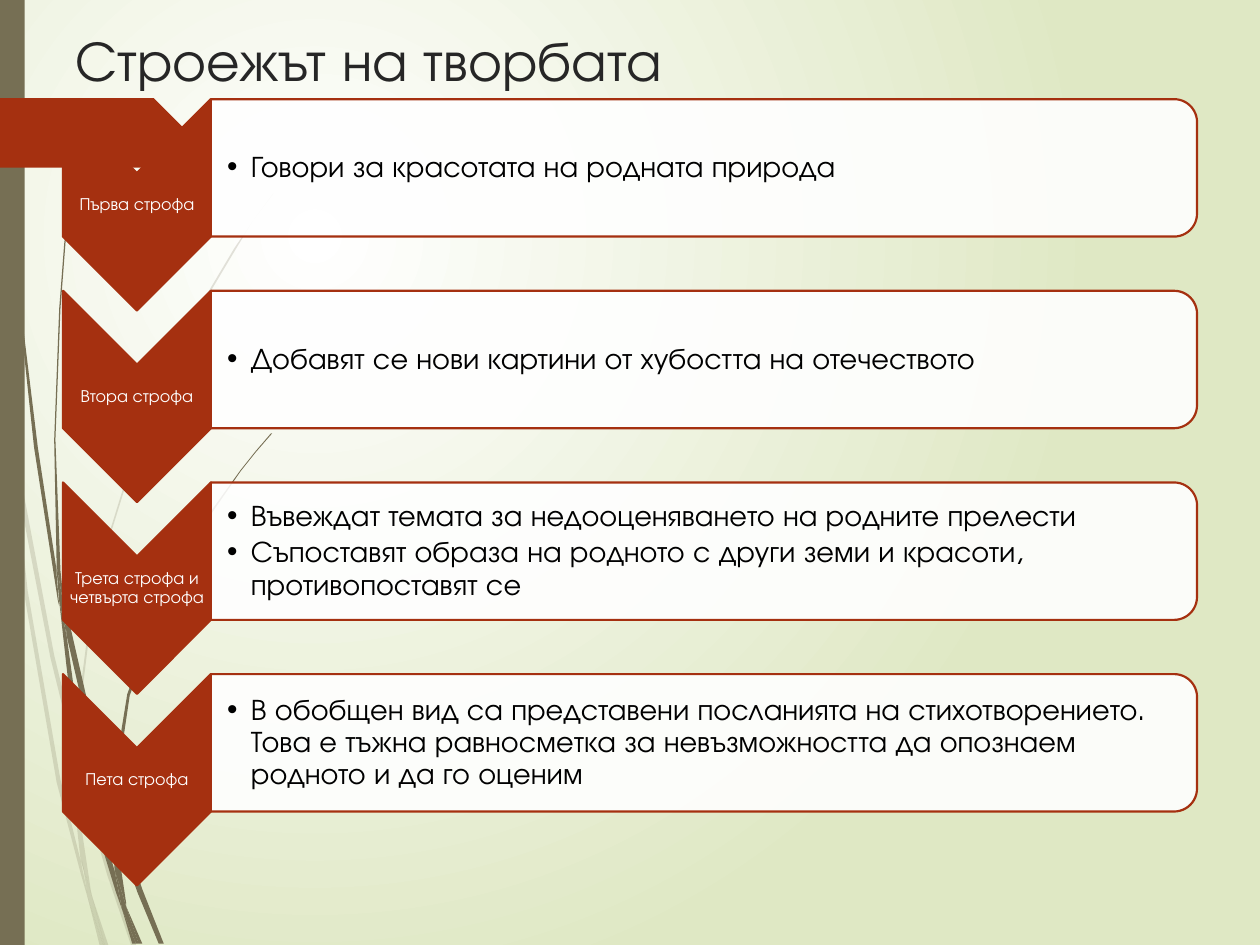
from dataclasses import dataclass

from lxml import etree
from pptx import Presentation
from pptx.dml.color import RGBColor
from pptx.enum.shapes import MSO_SHAPE
from pptx.enum.text import MSO_ANCHOR, PP_ALIGN
from pptx.oxml import parse_xml
from pptx.oxml.ns import qn
from pptx.util import Cm, Pt

RECT = MSO_SHAPE.RECTANGLE
CHEVRON = MSO_SHAPE.CHEVRON
ROUNDED_END = MSO_SHAPE.ROUND_2_SAME_RECTANGLE
TOP, MIDDLE = MSO_ANCHOR.TOP, MSO_ANCHOR.MIDDLE
LEFT, CENTER = PP_ALIGN.LEFT, PP_ALIGN.CENTER


@dataclass(frozen=True)
class Theme:
    font: str = "TeX Gyre Adventor"
    bullet_font: str = "Arial"
    accent: str = "A53010"
    stem: str = "766F54"
    glow: str = "FFFFFF"
    meadow: str = "DFE8C4"
    heading: str = "262626"
    body: str = "000000"
    heading_size: float = 32.4
    body_size: float = 17
    label_size: float = 10
    outline: float = 1.25


THEME = Theme()
SLIDE_W, SLIDE_H = 25.4, 19.05
STEM_UNIT = 2.54

STANZAS = [
    ("Първа строфа", ["Говори за красотата на родната природа"]),
    ("Втора строфа", ["Добавят се нови картини от хубостта на отечеството"]),
    ("Трета строфа и четвърта строфа", [
        "Въвеждат темата за недооценяването на родните прелести",
        "Съпоставят образа на родното с други земи и красоти, противопоставят се"]),
    ("Пета строфа", [
        "В обобщен вид са представени посланията на стихотворението. "
        "Това е тъжна равносметка за невъзможността да опознаем родното и да го оценим"]),
]

PALE_STEMS = [
    [(.4, 5.22), (.59, 5.99), (.59, 5.86), (.43, 5.2), (.1, 3.45), (.12, 3.76)],
    [(.64, 6.07), (.61, 5.96), (.61, 6.1), (.85, 6.94), (1.04, 7.5), (1.08, 7.5), (.88, 6.92)],
    [(.83, 7.5), (.86, 7.5), (.73, 7.11)],
    [(.64, 6.83), (.48, 6.19), (.22, 4.69), (.12, 3.76), (.08, 3.5), (.19, 4.7), (.45, 6.21),
     (.64, 6.93), (.7, 7.14), (.69, 7.07)],
    [(.58, 5.99), (.6, 6.46), (.64, 6.83), (.67, 6.92), (.73, 7.11), (.72, 7.06), (.63, 6.46),
     (.61, 6.1), (.61, 6.08)],
    [(.61, 5.84), (.76, 4.62), (1.11, 3.49), (1.59, 2.45), (1.87, 1.98), (2.01, 1.75),
     (2.17, 1.54), (2.17, 1.53), (2.01, 1.75), (1.86, 1.97), (1.58, 2.44), (1.1, 3.48),
     (.75, 4.61), (.59, 5.84), (.59, 5.86), (.61, 5.96)],
    [(.7, 7.14), (.79, 7.5), (.82, 7.5)],
    [(.61, 6.08), (.61, 6.1), (.61, 5.96), (.59, 5.86), (.58, 5.99)],
    [(.67, 6.92), (.65, 6.83), (.69, 7.07), (.7, 7.14), (.82, 7.5), (.83, 7.5), (.73, 7.11)],
]
DARK_STEMS = [
    [(.05, 1.1), (.14, 2.33), (.27, 3.55), (.46, 4.77), (.47, 4.81), (.45, 4.57), (.45, 4.53),
     (.3, 3.55), (.15, 2.32), (.06, 1.09), (.04, .48), (.03, 0), (.02, 0), (.03, .48)],
    [(.73, 5.92), (.88, 6.45), (.88, 6.33), (.88, 6.31), (.77, 5.9), (.5, 4.72), (.53, 5.05)],
    [(.94, 6.49), (.91, 6.41), (.91, 6.56), (1.09, 7.08), (1.26, 7.49), (1.3, 7.49), (1.13, 7.06)],
    [(.91, 6.91), (.81, 6.57), (.6, 5.56), (.53, 5.05), (.47, 4.77), (.56, 5.57), (.77, 6.59),
     (.92, 7.08), (.97, 7.22), (.96, 7.17)],
    [(.5, 4.72), (.48, 4.53), (.44, 3.49), (.48, 2.45), (.52, 1.93), (.58, 1.41), (.51, 1.93),
     (.47, 2.45), (.43, 3.49), (.45, 4.49), (.49, 4.72)],
    [(1.1, 7.49), (1.13, 7.49), (1, 7.19)],
    [(.47, 4.77), (.53, 5.05), (.5, 4.72), (.49, 4.72), (.45, 4.49), (.45, 4.53)],
    [(.91, 6.33), (1.03, 5.52), (1.31, 4.76), (1.69, 4.06), (1.91, 3.74), (2.03, 3.59),
     (2.16, 3.44), (2.15, 3.44), (2.03, 3.58), (1.91, 3.73), (1.68, 4.05), (1.29, 4.74),
     (1.01, 5.51), (.88, 6.31), (.91, 6.41)],
    [(.97, 7.22), (1.05, 7.49), (1.08, 7.49)],
    [(.88, 6.45), (.91, 6.91), (.96, 7.06), (1, 7.19), (1, 7.16), (.91, 6.56), (.9, 6.51)],
    [(.88, 6.45), (.9, 6.51), (.91, 6.56), (.91, 6.41), (.88, 6.31), (.88, 6.33)],
    [(.96, 7.06), (.91, 6.91), (.96, 7.17), (.97, 7.22), (1.08, 7.49), (1.1, 7.49), (1, 7.19)],
]


def paint(shape, color, opacity=100, outline=None):
    shape.shadow.inherit = False
    shape.fill.solid()
    shape.fill.fore_color.rgb = RGBColor.from_string(color)
    if opacity < 100:
        tint = shape.fill._xPr.find(qn("a:solidFill"))[0]
        etree.SubElement(tint, qn("a:alpha")).set("val", str(opacity * 1000))
    if outline:
        shape.line.color.rgb = RGBColor.from_string(outline)
        shape.line.width = Pt(THEME.outline)
    else:
        shape.line.fill.background()


def add_text(shapes, box, lines, *, size, color, align=LEFT, anchor=MIDDLE,
             insets=(.03, .03, .03, .03), spacing=1.0, after=0, bullet=False):
    frame = shapes.add_textbox(*map(Cm, box)).text_frame
    frame.word_wrap = True
    frame.vertical_anchor = anchor
    (frame.margin_left, frame.margin_top,
     frame.margin_right, frame.margin_bottom) = map(Cm, insets)
    for index, line in enumerate(lines):
        paragraph = frame.paragraphs[0] if index == 0 else frame.add_paragraph()
        paragraph.alignment = align
        paragraph.line_spacing = spacing
        paragraph.space_after = Pt(after)
        run = paragraph.add_run()
        run.text = line
        run.font.name = THEME.font
        run.font.size = Pt(size)
        run.font.color.rgb = RGBColor.from_string(color)
        if bullet:
            properties = paragraph._p.get_or_add_pPr()
            properties.set("marL", str(Cm(.48)))
            properties.set("indent", str(-Cm(.48)))
            etree.SubElement(properties, qn("a:buFont")).set("typeface", THEME.bullet_font)
            etree.SubElement(properties, qn("a:buChar")).set("char", "•")


def add_turned(shapes, preset, box, **look):
    left, top, width, height = box
    shift = (width - height) / 2
    shape = shapes.add_shape(preset, Cm(left + shift), Cm(top - shift), Cm(height), Cm(width))
    shape.rotation = 90
    paint(shape, **look)


def add_outline(shapes, points, origin, unit=1, **look):
    corners = [(Cm(x * unit), Cm(y * unit)) for x, y in points]
    builder = shapes.build_freeform(*corners[0])
    builder.add_line_segments(corners[1:], close=True)
    paint(builder.convert_to_shape(*map(Cm, origin)), **look)


def set_backdrop(slide):
    slide.background.fill.solid()
    properties = slide.background._cSld.bg.bgPr
    stops = "".join(
        f'<a:gs pos="{position}"><a:srgbClr val="{color}"/></a:gs>'
        for position, color in ((0, THEME.glow), (100000, THEME.meadow)))
    properties.replace(properties.find(qn("a:solidFill")), parse_xml(
        '<a:gradFill xmlns:a="http://schemas.openxmlformats.org/drawingml/2006/main" '
        f'rotWithShape="1"><a:gsLst>{stops}</a:gsLst><a:path path="circle">'
        '<a:fillToRect l="50000" t="50000" r="100000" b="100000"/></a:path></a:gradFill>'))


def add_decoration(slide, box):
    left, top, _, height = box
    for stems, opacity in ((PALE_STEMS, 20), (DARK_STEMS, 100)):
        cluster = slide.shapes.add_group_shape().shapes
        for stem in stems:
            add_outline(cluster, stem, (left, top), STEM_UNIT, color=THEME.stem, opacity=opacity)
    edge = slide.shapes.add_shape(RECT, Cm(left), Cm(top), Cm(.5), Cm(height))
    paint(edge, THEME.stem)


def add_page_arrow(slide, box):
    left, top, width, height = box
    neck = width - height / 2
    points = [(0, 0), (neck, 0), (width, height / 2), (neck, height), (0, height)]
    add_outline(slide.shapes, points, (left, top), color=THEME.accent)


def add_title(slide, box):
    add_text(slide.shapes, box, ["Строежът на творбата"], size=THEME.heading_size,
             color=THEME.heading, anchor=TOP, insets=(.25, .1, .25, .1))


def add_stanza(slide, box, label, points):
    left, top, width, height = box
    marker_w, panel_h = 2.98, 2.77
    panel_left, panel_w = left + marker_w, width - marker_w
    add_turned(slide.shapes, CHEVRON, (left, top, marker_w, height),
               color=THEME.accent, outline=THEME.accent)
    add_text(slide.shapes, (left, top + marker_w / 2, marker_w, height - marker_w), [label],
             size=THEME.label_size, color=THEME.glow, align=CENTER, spacing=.9, after=3.5)
    add_turned(slide.shapes, ROUNDED_END, (panel_left, top, panel_w, panel_h),
               color=THEME.glow, opacity=90, outline=THEME.accent)
    add_text(slide.shapes, (panel_left, top + .14, panel_w - .14, panel_h - .28), points,
             size=THEME.body_size, color=THEME.body, insets=(.33, .03, .03, .03),
             spacing=.9, after=2.5, bullet=True)


def add_stanzas(slide, box):
    left, top, width, height = box
    marker_h = 4.26
    pitch = (height - marker_h) / (len(STANZAS) - 1)
    for index, (label, points) in enumerate(STANZAS):
        add_stanza(slide, (left, top + index * pitch, width, marker_h), label, points)


def main():
    deck = Presentation()
    deck.slide_width, deck.slide_height = Cm(SLIDE_W), Cm(SLIDE_H)
    slide = deck.slides.add_slide(deck.slide_layouts[6])
    set_backdrop(slide)
    add_decoration(slide, (0, 0, SLIDE_W, SLIDE_H))
    add_page_arrow(slide, (0, 1.98, 3.8, 1.4))
    add_title(slide, (1.27, .41, 22.86, 1.4))
    add_stanzas(slide, (1.27, 2, 22.86, 15.85))
    deck.save("out.pptx")


if __name__ == "__main__":
    main()
